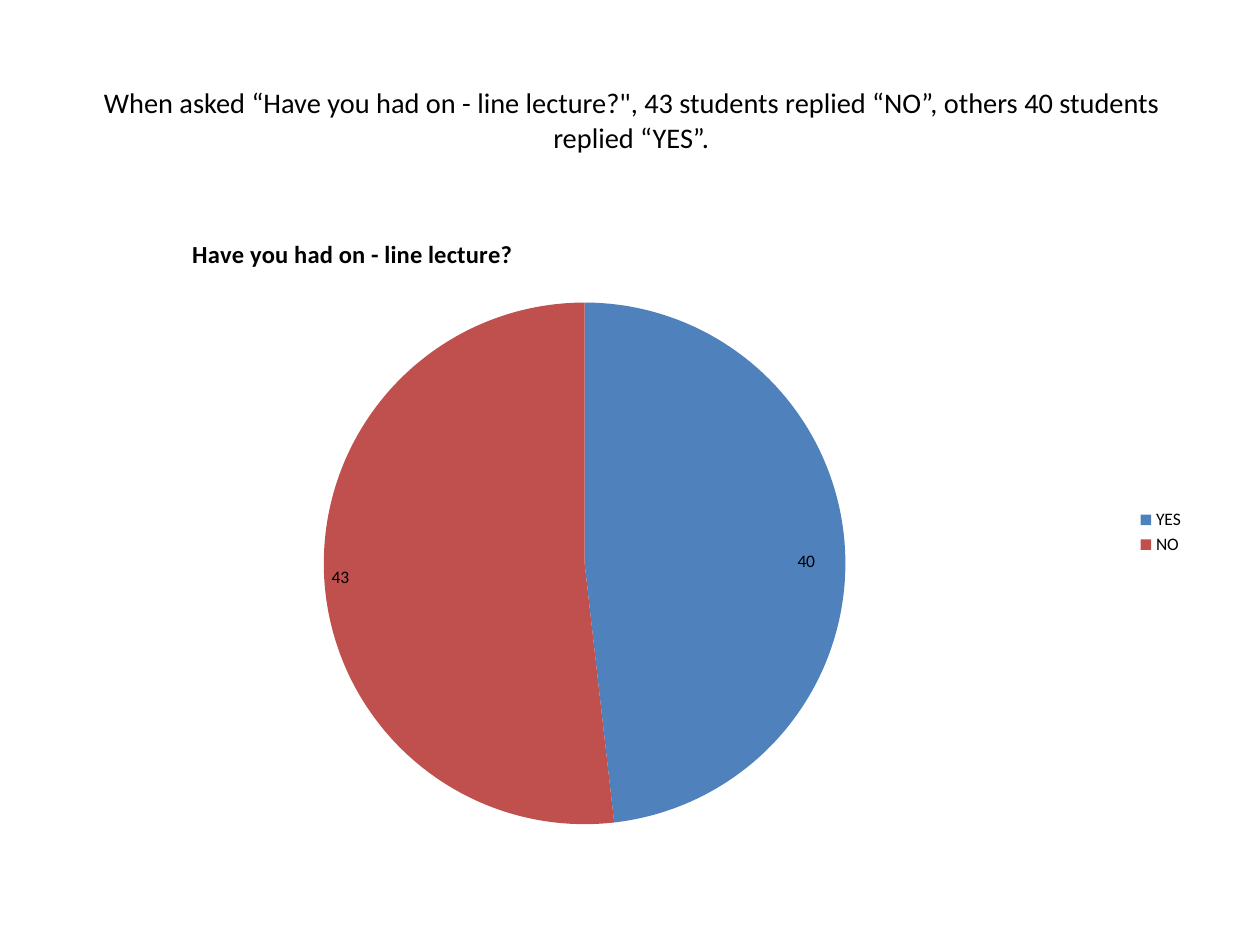
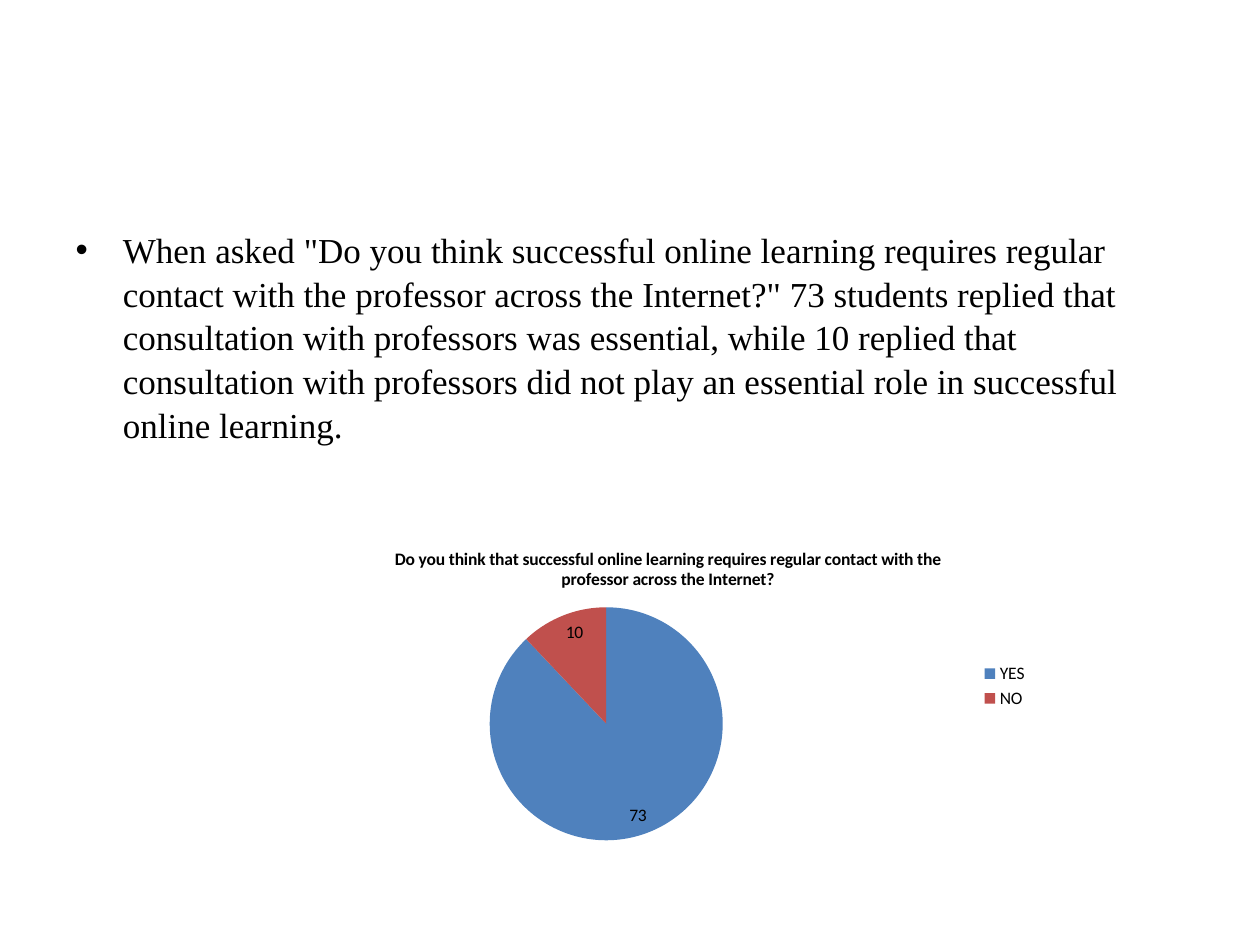
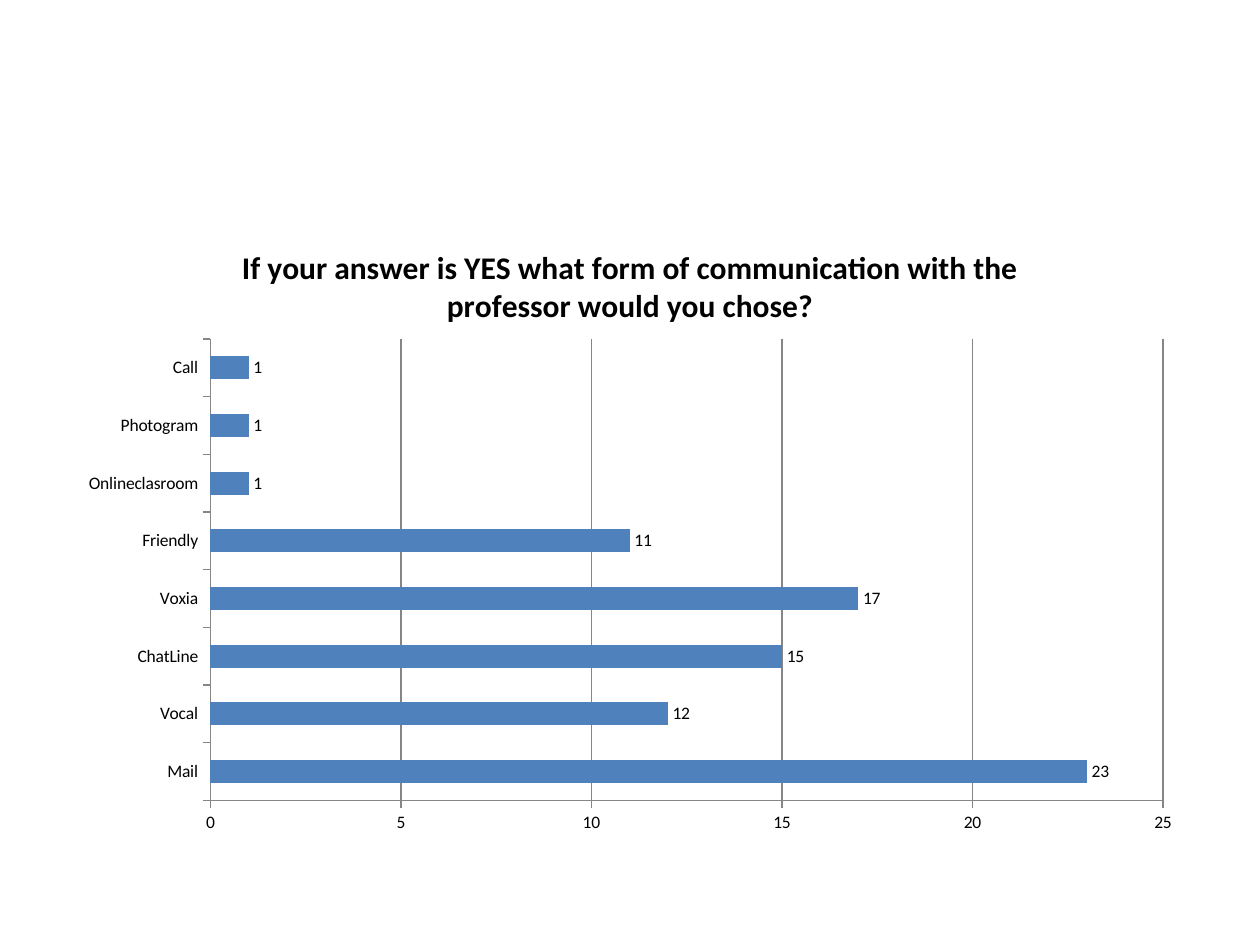
from lxml import etree
from pptx import Presentation
from pptx import util as u
from pptx.chart.data import CategoryChartData
from pptx.dml.color import RGBColor
from pptx.enum import chart as ch
from pptx.enum import text as tx
from pptx.oxml.ns import qn

BLACK, BLUE, RED, GRAY = "000000", "4F81BD", "C0504D", "868686"
TITLE_ONLY, TITLE_CONTENT, BLANK = 5, 1, 6


def write(frame, words, size, font="Calibri", bold=False, align=None, spacing=None):
    paragraph = frame.paragraphs[0]
    paragraph.alignment = align
    paragraph.line_spacing = spacing
    run = paragraph.add_run()
    run.text = words
    run.font.size, run.font.name, run.font.bold = u.Pt(size), font, bold
    run.font.color.rgb = RGBColor.from_string(BLACK)


def place(parent, after, **lengths):
    for old in parent.findall(qn("c:layout")):
        parent.remove(old)
    layout = etree.Element(qn("c:layout"))
    manual = etree.SubElement(layout, qn("c:manualLayout"))
    for tag, value in lengths.items():
        etree.SubElement(manual, qn("c:" + tag)).set("val", str(value))
    parent.insert(0 if after is None else parent.index(after) + 1, layout)


prs = Presentation()
prs.slide_width, prs.slide_height = u.Inches(10), u.Inches(7.5)

lecture = prs.slides.add_slide(prs.slide_layouts[TITLE_ONLY])
heading = lecture.shapes.title
heading.left, heading.top = u.Inches(0.51), u.Inches(1.07)
heading.width, heading.height = u.Inches(9), u.Inches(0.39)
heading.text_frame.auto_size = tx.MSO_AUTO_SIZE.NONE
heading.text_frame.vertical_anchor = tx.MSO_ANCHOR.BOTTOM
heading.text_frame.margin_bottom = u.Inches(0.24)
write(heading.text_frame,
      "When asked “Have you had on - line lecture?\", 43 students replied “NO”, "
      "others 40 students replied “YES”.", 16.2, align=tx.PP_ALIGN.CENTER)

contact = prs.slides.add_slide(prs.slide_layouts[TITLE_CONTENT])
empty_title = contact.shapes.title.element
empty_title.getparent().remove(empty_title)
write(contact.placeholders[1].text_frame,
      "When asked \"Do you think successful online learning requires regular contact with "
      "the professor across the Internet?\" 73 students replied that consultation with "
      "professors was essential, while 10 replied that consultation with professors did not "
      "play an essential role in successful online learning.",
      20, font="Times New Roman", spacing=1.04)

channels = prs.slides.add_slide(prs.slide_layouts[BLANK])

PIE, BAR = ch.XL_CHART_TYPE.PIE, ch.XL_CHART_TYPE.BAR_CLUSTERED
INSIDE, OUTSIDE = ch.XL_LABEL_POSITION.INSIDE_END, ch.XL_LABEL_POSITION.OUTSIDE_END
full_area = (0.5, 1.75, 9, 4.95)
answers = ["YES", "NO"]
tools = ["Mail", "Vocal", "ChatLine", "Voxia", "Friendly", "Onlineclasroom", "Photogram", "Call"]

questions = [
    (lecture, PIE, full_area, answers, [40, 43], "Have you had on - line lecture?", 14,
     (0.23, 0.13, 0.46, 0.84)),
    (contact, PIE, (2.34, 4.22, 5.92, 2.45), answers, [73, 10],
     "Do you think that successful online learning requires regular contact with the "
     "professor across the Internet?", 10, (0, 0.245, 0.835, 0.755)),
    (channels, BAR, full_area, tools, [23, 12, 15, 17, 11, 1, 1, 1],
     "If your answer is YES what form of communication with the professor would you chose?",
     18, (0.13, 0.19, 0.84, 0.74)),
]

charts = []
for slide, kind, area, categories, counts, question, size, (x, y, w, h) in questions:
    data = CategoryChartData()
    data.categories = categories
    data.add_series("Series 1", counts)
    chart = slide.shapes.add_chart(kind, *[u.Inches(v) for v in area], data).chart
    charts.append(chart)
    chart.font.size, chart.font.name = u.Pt(10), "Calibri"
    chart.font.color.rgb = RGBColor.from_string(BLACK)
    chart.has_title = True
    write(chart.chart_title.text_frame, question, size, bold=True)
    chart.chart_title.include_in_layout = False
    place(chart.plots[0]._element.getparent(), None, layoutTarget="inner",
          xMode="edge", yMode="edge", x=x, y=y, w=w, h=h)

    plot = chart.plots[0]
    plot.vary_by_categories = kind == PIE
    plot.has_data_labels = True
    plot.data_labels.show_value = True
    plot.data_labels.position = INSIDE if kind == PIE else OUTSIDE
    chart.has_legend = kind == PIE
    if kind == PIE:
        chart.legend.position = ch.XL_LEGEND_POSITION.RIGHT
        chart.legend.include_in_layout = False
        for index, color in enumerate([BLUE, RED]):
            fill = plot.series[0].points[index].format.fill
            fill.solid()
            fill.fore_color.rgb = RGBColor.from_string(color)

lecture_pie, contact_pie, channel_bars = charts
lecture_title = lecture_pie.chart_title._element
place(lecture_title, lecture_title.find(qn("c:tx")),
      xMode="edge", yMode="edge", x=0.11, y=0.02)

yes_label = lecture_pie.plots[0].series[0].points[0].data_label
yes_label.position = INSIDE
yes_element = next(lecture_pie._chartSpace.iter(qn("c:dLbl")))
place(yes_element, yes_element.find(qn("c:idx")), x=-0.02, y=0.02)
series_labels = lecture_pie.plots[0].series[0].data_labels
series_labels.show_value = True
series_labels.position = INSIDE

bars = channel_bars.plots[0]
bars.gap_width = 150
bars.series[0].format.fill.solid()
bars.series[0].format.fill.fore_color.rgb = RGBColor.from_string(BLUE)
counts_axis = channel_bars.value_axis
counts_axis.minimum_scale, counts_axis.maximum_scale, counts_axis.major_unit = 0, 25, 5
counts_axis.has_major_gridlines = True
for axis in (channel_bars.category_axis, counts_axis):
    axis.major_tick_mark = ch.XL_TICK_MARK.OUTSIDE
    axis.format.line.color.rgb = RGBColor.from_string(GRAY)
counts_axis.major_gridlines.format.line.color.rgb = RGBColor.from_string(GRAY)

prs.save("out.pptx")
